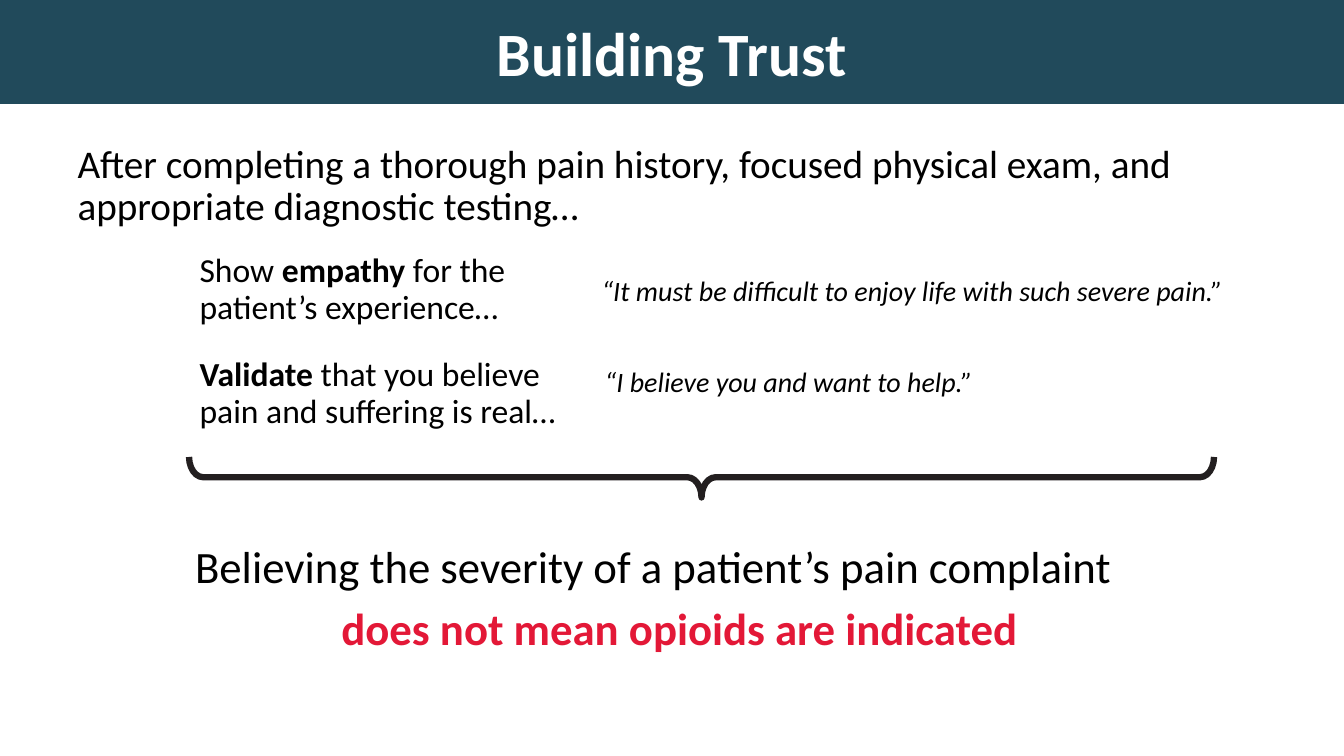
import pptx
import pptx.util
import pptx.dml.color
import pptx.enum.shapes
import pptx.enum.text
from pptx.util import Cm, Pt

FONT = "Calibri"
BLACK, WHITE, TEAL, RED, INK = "000000", "FFFFFF", "214A5B", "E31837", "231F20"
TITLE = "Building Trust"
INTRO = ("After completing a thorough pain history, focused physical exam, "
         "and appropriate diagnostic testing…")
# Runs of each step: (text, bold)
STEPS = [
    [("Show ", False), ("empathy", True), (" for the patient’s experience…", False)],
    [("Validate", True), (" that you believe pain and suffering is real…", False)],
]
# (text, box in cm, inset in cm)
QUOTES = [
    ("“It must be difficult to enjoy life with such severe pain.”",
     (14.68, 6.45, 16.81, 1.73), 0.48),
    ("“I believe you and want to help.”", (14.99, 9.04, 14.58, 1.12), 0.25),
]
# (text, colour, bold, left indent in cm)
CLOSING = [
    ("Believing the severity of a patient’s pain complaint", BLACK, False, 0),
    ("does not mean opioids are indicated", RED, True, 1.32),
]
STEP_TOP, STEP_GAP = 6.27, 2.62
CENTER = pptx.enum.text.PP_ALIGN.CENTER
MIDDLE = pptx.enum.text.MSO_ANCHOR.MIDDLE


def rgb(code):
    return pptx.dml.color.RGBColor.from_string(code)


def style(para, size, color=BLACK, bold=None, italic=None):
    font = para.font
    font.name, font.size, font.color.rgb = FONT, Pt(size), rgb(color)
    font.bold, font.italic = bold, italic


def place(shape, box):
    shape.left, shape.top, shape.width, shape.height = map(Cm, box)


def add_box(slide, box):
    """Add a wrapping text box and return its text frame."""
    frame = slide.shapes.add_textbox(*map(Cm, box)).text_frame
    frame.word_wrap = True
    return frame


def add_heads(slide):
    """Fill the title bar and the opening sentence."""
    title, body = slide.shapes.title, slide.placeholders[1]
    place(title, (0, 0, 33.87, 2.62))
    title.fill.solid()
    title.fill.fore_color.rgb = rgb(TEAL)
    place(body, (1.7, 3.51, 28.52, 2.62))
    for shape, text in ((title, TITLE), (body, INTRO)):
        shape.text_frame.text = text
        shape.text_frame.auto_size = pptx.enum.text.MSO_AUTO_SIZE.NONE

    para = title.text_frame.paragraphs[0]
    para.alignment = CENTER
    title.text_frame.vertical_anchor = MIDDLE
    style(para, 44, WHITE, bold=True)

    para = body.text_frame.paragraphs[0]
    style(para, 28)
    para.line_spacing, para.space_before, para.space_after = 0.9, Pt(0), Pt(6)
    props = para._p.get_or_add_pPr()
    props.set("marL", "0")
    props.set("indent", "0")
    props.append(pptx.oxml.parse_xml(
        '<a:buNone xmlns:a="http://schemas.openxmlformats.org/drawingml/2006/main"/>'
    ))
    # Bullet settings come before the default run settings
    props.append(props.find(pptx.oxml.ns.qn("a:defRPr")))


def add_steps(slide):
    for row, runs in enumerate(STEPS):
        frame = add_box(slide, (4.78, STEP_TOP + row * STEP_GAP, 9.65, 2.11))
        para = frame.paragraphs[0]
        para.line_spacing, para.space_after = 0.9, Pt(6)
        style(para, 24)
        for text, bold in runs:
            run = para.add_run()
            run.text, run.font.bold = text, bold


def add_quotes(slide):
    for text, box, inset in QUOTES:
        frame = add_box(slide, box)
        frame.margin_left = frame.margin_right = Cm(inset)
        frame.vertical_anchor = MIDDLE
        frame.text = text
        style(frame.paragraphs[0], 20, italic=True)


def add_brace(slide):
    brace = slide.shapes.add_shape(
        pptx.enum.shapes.MSO_SHAPE.LEFT_BRACE,
        Cm(17.17), Cm(-0.89), Cm(1.02), Cm(25.83))
    brace.rotation = 270
    brace.adjustments[0], brace.adjustments[1] = 0.35, 0.5
    brace.shadow.inherit = False
    brace.fill.background()
    brace.line.color.rgb, brace.line.width = rgb(INK), Pt(4.5)


def add_closing(slide):
    frame = add_box(slide, (3.35, 13.44, 26.24, 3.2))
    for row, (text, color, bold, indent) in enumerate(CLOSING):
        para = frame.add_paragraph() if row else frame.paragraphs[0]
        para.text = text
        para.alignment, para.space_before = CENTER, Pt(6)
        style(para, 32, color, bold)
        para._p.get_or_add_pPr().set("marL", str(Cm(indent)))


def main():
    deck = pptx.Presentation()
    deck.slide_width, deck.slide_height = Cm(33.87), Cm(19.05)
    slide = deck.slides.add_slide(deck.slide_layouts[1])
    add_heads(slide)
    add_quotes(slide)
    add_closing(slide)
    add_brace(slide)
    add_steps(slide)
    deck.save("out.pptx")


if __name__ == "__main__":
    main()
